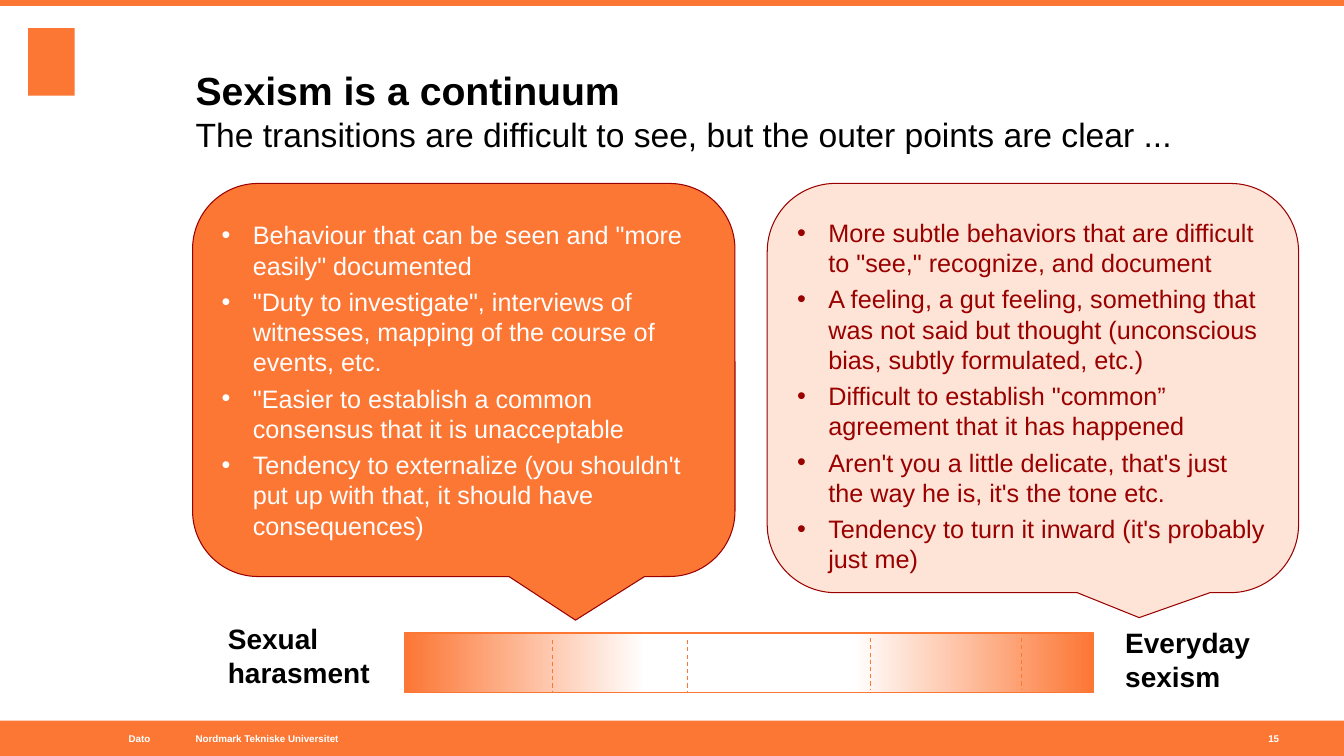
"""Build a slide on sexism as a continuum, with two callouts above a gradient scale."""
from lxml import etree
from pptx import Presentation, util as u
from pptx.dml.color import RGBColor
from pptx.enum import dml, shapes, text
from pptx.oxml.ns import qn

COLOURS = {"orange": "FC7634", "peach": "FEE4D6", "wine": "990000",
           "white": "FFFFFF", "black": "000000"}
WIDTH, HEIGHT = 13.33, 7.5
MARGIN, FOOTER_TOP, FOOTER_HEIGHT = 1.94, 7.15, 0.35


def add_block(kind, area, fill, line=None):
    block = page.shapes.add_shape(kind, *map(u.Inches, area))
    block.shadow.inherit = False
    block.fill.solid()
    block.fill.fore_color.rgb = RGBColor.from_string(COLOURS[fill])
    if line:
        block.line.color.rgb = RGBColor.from_string(COLOURS[line])
        block.line.width = u.Pt(0.75)
    else:
        block.line.fill.background()
    return block


def style(font, size, colour, bold=False):
    font.name, font.size, font.bold = "Arial", u.Pt(size), bold
    font.color.rgb = RGBColor.from_string(COLOURS[colour])


deck = Presentation()
deck.slide_width, deck.slide_height = u.Inches(WIDTH), u.Inches(HEIGHT)
page = deck.slides.add_slide(deck.slide_layouts[5])

title = page.shapes.title
title.left, title.top, title.width, title.height = map(u.Inches, (MARGIN, 0.47, 10.18, 1.06))
frame = title.text_frame
frame.auto_size = text.MSO_AUTO_SIZE.NONE
frame.vertical_anchor = text.MSO_ANCHOR.BOTTOM
frame.margin_left = frame.margin_top = frame.margin_right = frame.margin_bottom = 0
para = frame.paragraphs[0]
para.alignment = text.PP_ALIGN.LEFT
span = para.add_run()
span.text = "Sexism is a continuum"
style(span.font, 28, "black", True)
para.add_line_break()
span = para.add_run()
span.text = "The transitions are difficult to see, but the outer points are clear ..."
style(span.font, 24, "black")

for top, height in ((0, 0.06), (FOOTER_TOP, FOOTER_HEIGHT)):
    add_block(shapes.MSO_SHAPE.RECTANGLE, (0, top, WIDTH, height), "orange")
add_block(shapes.MSO_SHAPE.RECTANGLE, (0.28, 0.28, 0.46, 0.67), "orange")

callouts = [
    ((1.91, 1.82, 5.38, 3.9), (0.206, 0.611), "orange", "white", 0.05, [
        'Behaviour that can be seen and "more easily" documented',
        '"Duty to investigate", interviews of witnesses, mapping of the course of events, etc.',
        '"Easier to establish a common consensus that it is unacceptable',
        "Tendency to externalize (you shouldn't put up with that, it should have consequences)",
    ]),
    ((7.61, 1.82, 5.27, 4.06), (0.2, 0.561), "peach", "wine", 0.2, [
        'More subtle behaviors that are difficult to "see," recognize, and document',
        "A feeling, a gut feeling, something that was not said but thought "
        "(unconscious bias, subtly formulated, etc.)",
        'Difficult to establish "common” agreement that it has happened',
        "Aren't you a little delicate, that's just the way he is, it's the tone etc.",
        "Tendency to turn it inward (it's probably just me)",
    ]),
]
for area, tip, fill, ink, top_margin, points in callouts:
    callout = add_block(shapes.MSO_SHAPE.ROUNDED_RECTANGULAR_CALLOUT, area, fill, "wine")
    callout.adjustments[0], callout.adjustments[1] = tip
    frame = callout.text_frame
    frame.word_wrap = True
    frame.vertical_anchor = text.MSO_ANCHOR.MIDDLE
    frame.margin_top = u.Inches(top_margin)
    for index, point in enumerate(points):
        para = frame.add_paragraph() if index else frame.paragraphs[0]
        para.text = point
        para.alignment = text.PP_ALIGN.LEFT
        para.space_before = u.Pt(4.3)
        style(para.font, 18, ink)
        props = para._p.get_or_add_pPr()
        props.set("marL", str(u.Inches(0.31)))
        props.set("indent", str(u.Inches(-0.31)))
        bullet_font = etree.Element(qn("a:buFont"), typeface="Arial")
        bullet = etree.Element(qn("a:buChar"), char="•")
        props.find(qn("a:defRPr")).addprevious(bullet_font)
        bullet_font.addnext(bullet)

scale = add_block(shapes.MSO_SHAPE.RECTANGLE, (4.01, 6.28, 6.84, 0.59), "white", "orange")
scale.fill.gradient()
scale.fill.gradient_angle = 0
stops = scale._element.spPr.find(".//" + qn("a:gsLst"))
for stop in list(stops):
    stops.remove(stop)
for share, colour in ((0, "orange"), (35, "white"), (65, "white"), (100, "orange")):
    stop = etree.SubElement(stops, qn("a:gs"), pos=str(share * 1000))
    etree.SubElement(stop, qn("a:srgbClr"), val=COLOURS[colour])

for x, top in ((5.48, 6.35), (6.82, 6.35), (8.63, 6.33), (10.13, 6.33)):
    mark = page.shapes.add_connector(shapes.MSO_CONNECTOR.STRAIGHT, *map(u.Inches, (x, top, x, top + 0.51)))
    mark.line.color.rgb = RGBColor.from_string(COLOURS["orange"])
    mark.line.width = u.Pt(0.75)
    mark.line.dash_style = dml.MSO_LINE.DASH
    etree.SubElement(mark._element.spPr, qn("a:effectLst"))

left, right = text.PP_ALIGN.LEFT, text.PP_ALIGN.RIGHT
top, middle = text.MSO_ANCHOR.TOP, text.MSO_ANCHOR.MIDDLE
labels = [
    ("Sexual harasment", (2.26, 6.17, 1.42, 0.67), 20, "black", left, top),
    ("Everyday sexism", (11.16, 6.21, 1.89, 0.67), 20, "black", left, top),
    ("Dato", (0.28, FOOTER_TOP, 1.21, FOOTER_HEIGHT), 7, "white", right, middle),
    ("Nordmark Tekniske Universitet", (MARGIN, FOOTER_TOP, 3.72, FOOTER_HEIGHT), 7, "white", left, middle),
    ("15", (12.58, FOOTER_TOP, 0.47, FOOTER_HEIGHT), 7, "white", left, middle),
]
for words, area, size, colour, alignment, anchor in labels:
    box = page.shapes.add_textbox(*map(u.Inches, area))
    frame = box.text_frame
    frame.word_wrap = True
    frame.vertical_anchor = anchor
    frame.margin_left = frame.margin_top = frame.margin_right = frame.margin_bottom = 0
    para = frame.paragraphs[0]
    para.text = words
    para.alignment = alignment
    if size == 20:
        para.space_before = u.Pt(4.3)
    style(para.font, size, colour, True)

deck.save("out.pptx")
